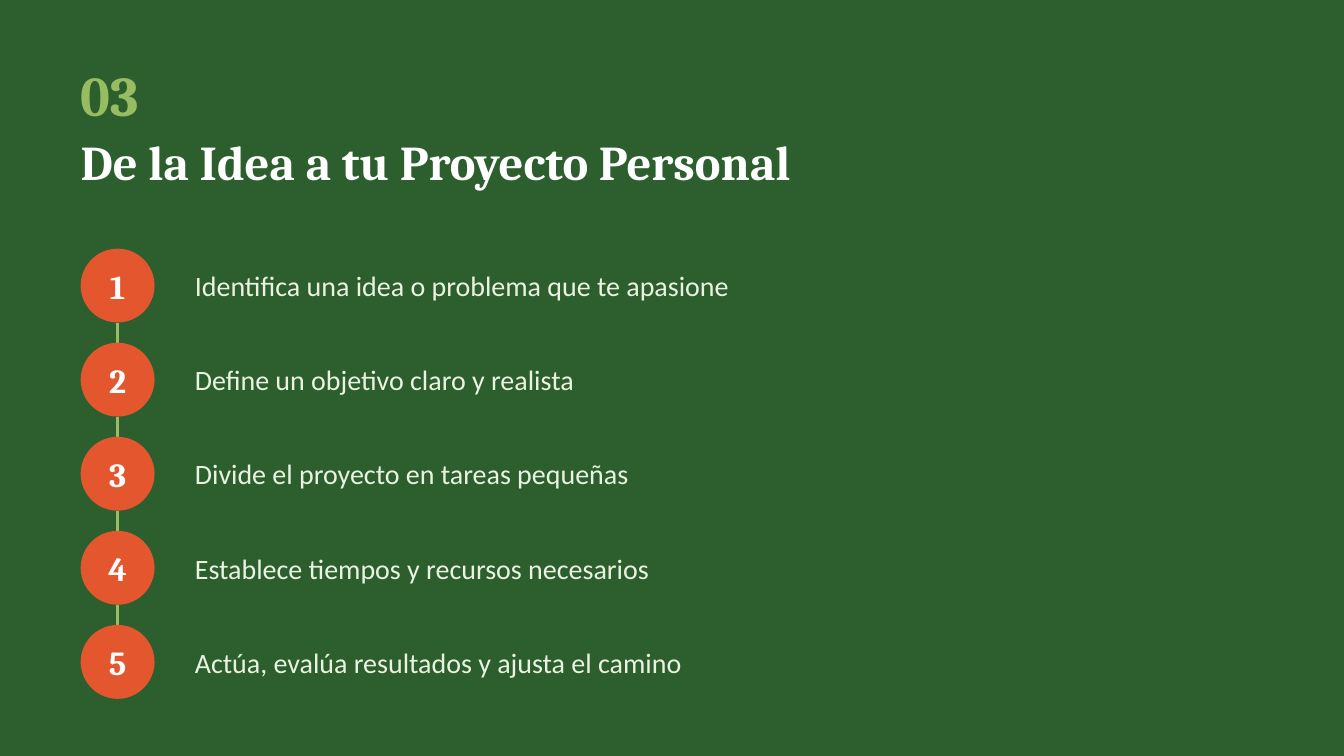
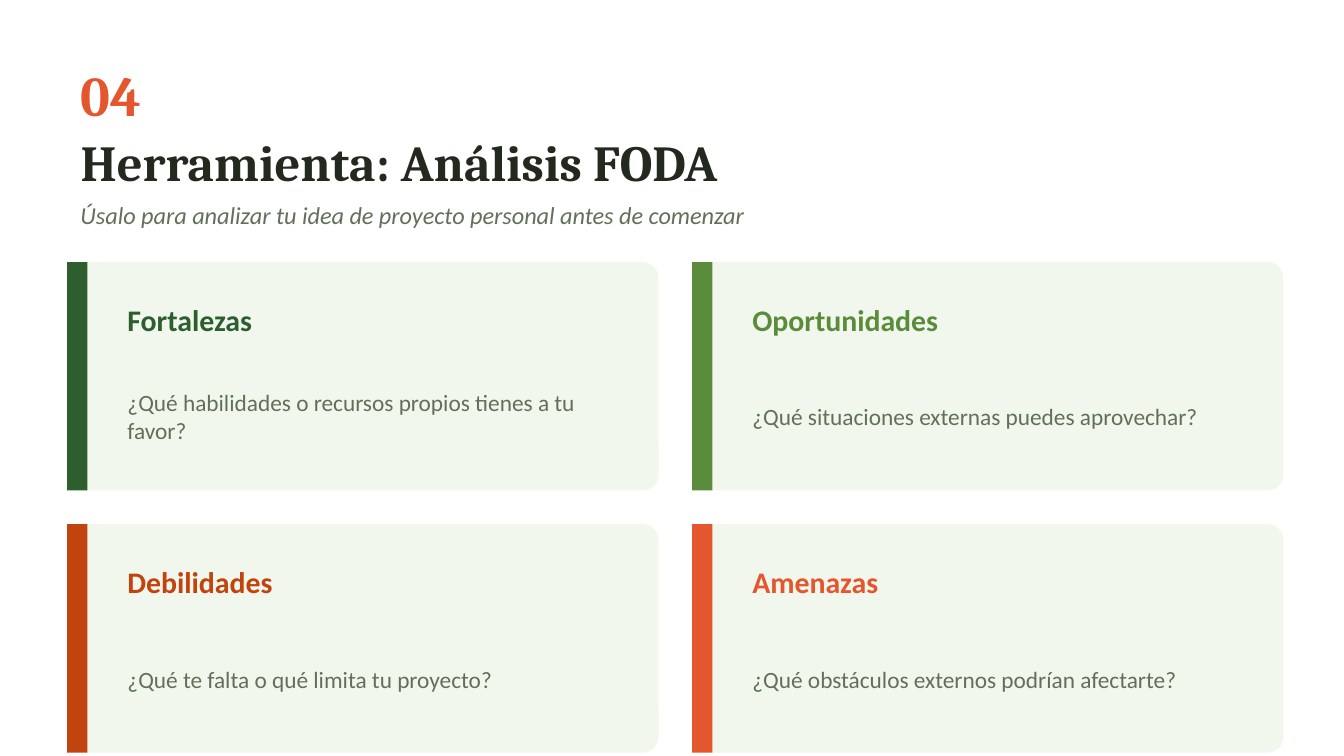
from dataclasses import dataclass

from lxml.etree import SubElement as Sub
from pptx import Presentation
from pptx.dml.color import RGBColor as Color
from pptx.enum.shapes import MSO_CONNECTOR as Link, MSO_SHAPE as Kind
from pptx.enum.text import MSO_ANCHOR as Anchor, MSO_AUTO_SIZE as Fit, PP_ALIGN as Align
from pptx.oxml.ns import qn
from pptx.util import Inches, Pt


@dataclass(frozen=True)
class Theme:
    # Colours
    forest: str = "2C5F2D"
    leaf: str = "5B8C3B"
    lime: str = "97BC62"
    mint: str = "EAF3E2"
    pale: str = "F1F7ED"
    rust: str = "C1440E"
    orange: str = "E4572E"
    ink: str = "24291F"
    moss: str = "62705A"
    white: str = "FFFFFF"
    # Type styles: font, size, bold, italic
    number: tuple = ("Cambria", 30, True, False)
    title: tuple = ("Cambria", 26, True, False)
    large: tuple = ("Cambria", 27, True, False)
    badge: tuple = ("Cambria", 18, True, False)
    step: tuple = ("Calibri", 15, False, False)
    lead: tuple = ("Calibri", 13, False, True)
    head: tuple = ("Calibri", 16, True, False)
    body: tuple = ("Calibri", 12.5, False, False)


theme = Theme()


def write(shape, text, style, hue, align=Align.LEFT):
    frame = shape.text_frame
    frame.text = text
    frame.word_wrap = True
    frame.auto_size = Fit.NONE
    frame.vertical_anchor = Anchor.MIDDLE
    for para in frame.paragraphs:
        para.alignment = align
        for run in para.runs:
            font = run.font
            font.name, size, font.bold, font.italic = style
            font.size = Pt(size)
            font.color.rgb = Color.from_string(hue)
    return frame


def draw(slide, kind, area, hue):
    shape = slide.shapes.add_shape(kind, *map(Inches, area))
    shape.shadow.inherit = False
    shape.fill.solid()
    shape.fill.fore_color.rgb = Color.from_string(hue)
    shape.line.fill.background()
    return shape


# Widescreen deck, 16 by 9
deck = Presentation()
deck.slide_width = Inches(10)
deck.slide_height = Inches(10 * 9 / 16)

# Shared background, section number and title
pages = [
    (1, theme.forest, "03", theme.lime,
     "De la Idea a tu Proyecto Personal", theme.title, theme.white, 9.2),
    (5, theme.white, "04", theme.orange,
     "Herramienta: Análisis FODA", theme.large, theme.ink, 9),
]
slides = []
for layout, back, number, accent, text, style, hue, width in pages:
    slide = deck.slides.add_slide(deck.slide_layouts[layout])
    slide.background.fill.solid()
    slide.background.fill.fore_color.rgb = Color.from_string(back)
    box = slide.shapes.add_textbox(*map(Inches, (0.5, 0.4, 2, 0.6)))
    write(box, number, theme.number, accent)
    title = slide.shapes.title
    title.left, title.top, title.width, title.height = map(Inches, (0.5, 0.85, width, 0.7))
    write(title, text, style, hue)
    slides.append(slide)
plan, swot = slides

# Steps: one list, each line level with its numbered circle
steps = [
    "Identifica una idea o problema que te apasione",
    "Define un objetivo claro y realista",
    "Divide el proyecto en tareas pequeñas",
    "Establece tiempos y recursos necesarios",
    "Actúa, evalúa resultados y ajusta el camino",
]
left, top, size, pitch = 0.6, 1.85, 0.55, 0.7
count = len(steps)
tall = pitch * (count - 1) + size
body = plan.placeholders[1]
body.left, body.top, body.width, body.height = map(Inches, (1.35, top, 8.1, tall))
frame = write(body, "\n".join(steps), theme.step, theme.mint)
for i, para in enumerate(frame.paragraphs):
    props = para._p.get_or_add_pPr()
    props.set("marL", "0")
    props.set("indent", "0")
    Sub(props, qn("a:buNone"))
    para.line_spacing = 1.0
    para.space_before = Pt(32.5 if i else 0)

# Numbered circles and the links between them
for i in range(count):
    y = top + i * pitch
    disc = draw(plan, Kind.OVAL, (left, y, size, size), theme.orange)
    frame = write(disc, str(i + 1), theme.badge, theme.white, Align.CENTER)
    frame.margin_left = frame.margin_right = frame.margin_top = frame.margin_bottom = 0
    if i < count - 1:
        x = left + size / 2
        line = plan.shapes.add_connector(
            Link.STRAIGHT, *map(Inches, (x, y + size, x, y + pitch)))
        line.line.color.rgb = Color.from_string(theme.lime)
        line.line.width = Pt(2)
        Sub(line._element.spPr, qn("a:effectLst"))

# Lead line under the title
box = swot.shapes.add_textbox(*map(Inches, (0.5, 1.4, 8.5, 0.4)))
write(box, "Úsalo para analizar tu idea de proyecto personal antes de comenzar",
      theme.lead, theme.moss)

# Two by two grid of cards
cards = [
    ("Fortalezas", "¿Qué habilidades o recursos propios tienes a tu favor?", theme.forest),
    ("Oportunidades", "¿Qué situaciones externas puedes aprovechar?", theme.leaf),
    ("Debilidades", "¿Qué te falta o qué limita tu proyecto?", theme.rust),
    ("Amenazas", "¿Qué obstáculos externos podrían afectarte?", theme.orange),
]
wide, high, gap = 4.4, 1.7, 0.25
for i, (head, text, hue) in enumerate(cards):
    row, col = divmod(i, 2)
    x, y = 0.5 + col * (wide + gap), 1.95 + row * (high + gap)
    card = draw(swot, Kind.ROUNDED_RECTANGLE, (x, y, wide, high), theme.pale)
    card.adjustments[0] = 0.07
    draw(swot, Kind.RECTANGLE, (x, y, 0.15, high), hue)
    box = swot.shapes.add_textbox(*map(Inches, (x + 0.35, y + 0.18, 3.9, 0.5)))
    write(box, head, theme.head, hue)
    box = swot.shapes.add_textbox(*map(Inches, (x + 0.35, y + 0.7, 3.85, 0.9)))
    write(box, text, theme.body, theme.moss)

deck.save("out.pptx")
